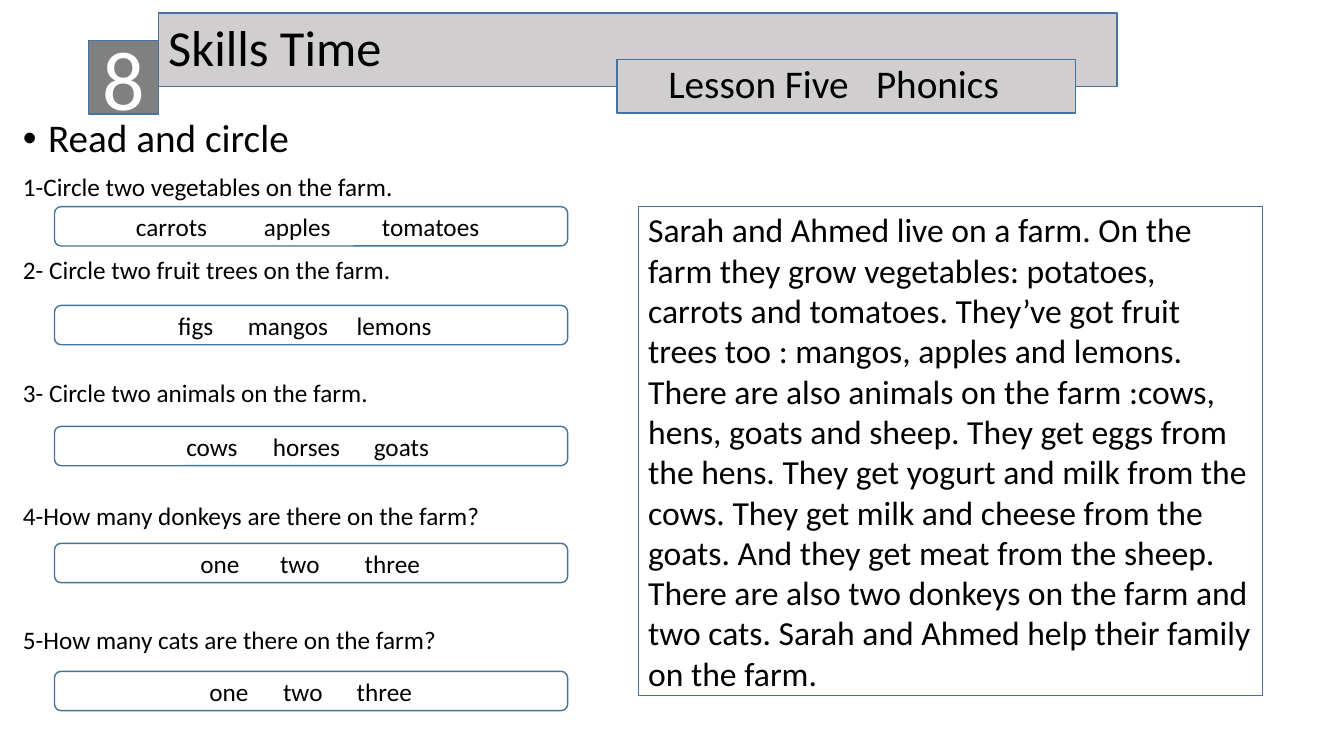
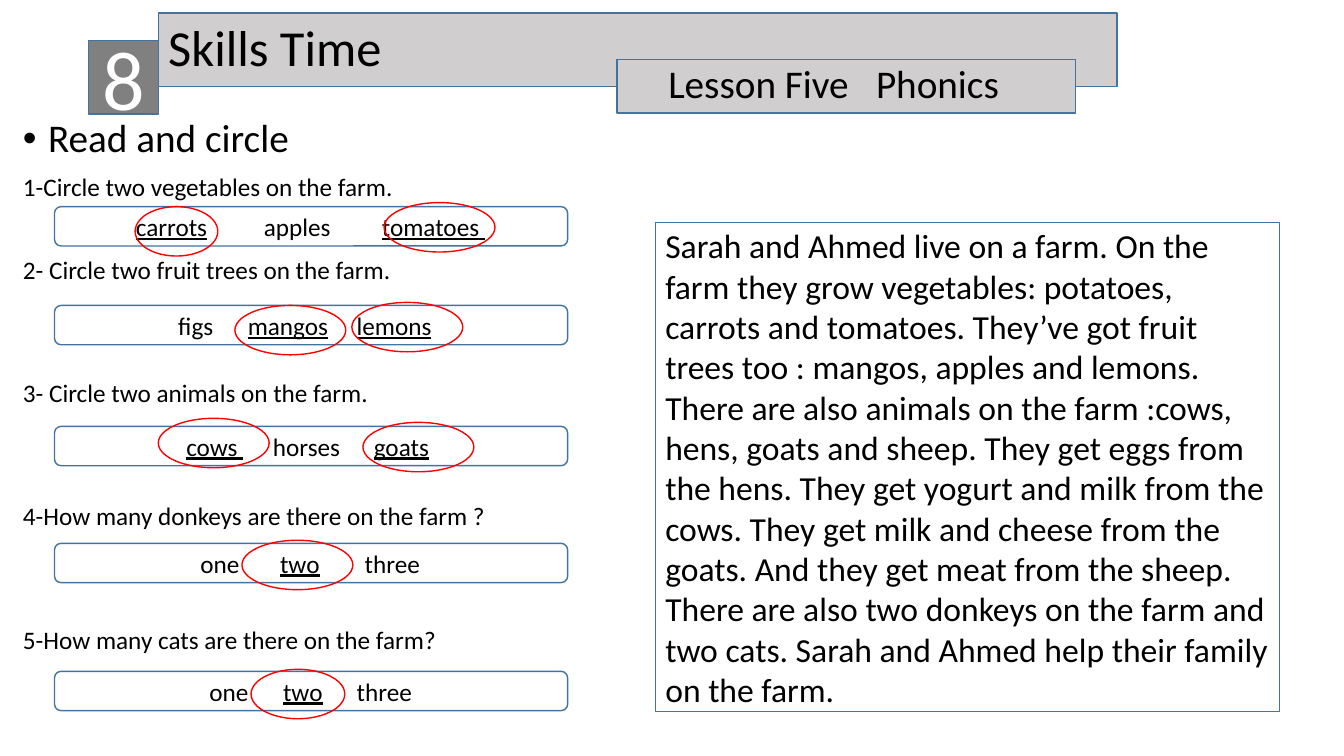
"""Build two phonics worksheet slides: the exercise and its answers."""
from lxml.etree import SubElement
from pptx import Presentation
from pptx.dml.color import RGBColor
from pptx.enum.shapes import MSO_SHAPE as Shape
from pptx.enum.text import MSO_ANCHOR as Anchor, PP_ALIGN as Align
from pptx.oxml.ns import qn
from pptx.util import Inches, Pt

PASSAGE = (
    "Sarah and Ahmed live on a farm. On the farm they grow vegetables: "
    "potatoes, carrots and tomatoes. They’ve got fruit trees too : mangos, "
    "apples and lemons. There are also animals on the farm :cows, hens, goats "
    "and sheep. They get eggs from the hens. They get yogurt and milk from the "
    "cows. They get milk and cheese from the goats. And they get meat from the "
    "sheep. There are also two donkeys on the farm and two cats. Sarah and "
    "Ahmed help their family on the farm."
)

QUESTIONS = [
    ("1-Circle two vegetables on the farm.", 10),
    ("2- Circle two fruit trees on the farm.", 39.3),
    ("3- Circle two animals on the farm.", 68.6),
    ("4-How many donkeys are there on the farm{gap}?", 68.6),
    ("5-How many cats are there on the farm?", 68.6),
]

CHOICES = [
    (2.05, ["carrots", "apples", "tomatoes "], [0.69, 1.96, 3.13], {0, 2}),
    (3.03, ["figs", "mangos", "lemons"], [1.11, 1.8, 2.88], {1, 2}),
    (4.23, ["cows ", "horses", "goats"], [1.19, 2.05, 3.05], {0, 2}),
    (5.39, ["one", "two", "three"], [1.33, 2.12, 2.96], {1}),
    (6.66, ["one", "two", "three"], [1.42, 2.15, 2.88], {1}),
]

CIRCLES = [
    (1.34, 2.05, 0.82), (3.81, 2.01, 1.1),
    (2.33, 3.03, 1.1), (3.49, 3, 1.1),
    (1.57, 4.15, 1.1), (3.6, 4.19, 1.1),
    (2.4, 5.36, 1.1), (2.49, 6.64, 0.93),
]


def colour(code):
    return RGBColor.from_string(code)


def write(paragraph, text, size=18, ink="000000", font="Calibri", align=Align.LEFT,
          spacing=None, before=None, bullet=False, stops=(), underlined=()):
    properties = paragraph._p.get_or_add_pPr()
    if bullet:
        properties.set("marL", str(Inches(0.25)))
        properties.set("indent", str(-Inches(0.25)))
        SubElement(properties, qn("a:buFont"), typeface="Arial")
        SubElement(properties, qn("a:buChar"), char="•")
    if stops:
        tabs = SubElement(properties, qn("a:tabLst"))
        for stop in stops:
            SubElement(tabs, qn("a:tab"), pos=str(Inches(stop)), algn="l")
    paragraph.alignment = align
    if spacing:
        paragraph.line_spacing = spacing
    if before:
        paragraph.space_before = Pt(before)
    words = [text] if isinstance(text, str) else text
    for index, word in enumerate(words):
        pieces = [("\t", False)] if stops else []
        pieces.append((word, index in underlined))
        for piece, marked in pieces:
            run = paragraph.add_run()
            run.text = piece
            run.font.name = font
            run.font.size = Pt(size)
            run.font.color.rgb = colour(ink)
            if marked:
                run.font.underline = True


class Worksheet:
    edge, band, badge, paper, mark = "43739E", "D0CECE", "808080", "FFFFFF", "FF0000"

    def __init__(self):
        self.deck = Presentation()
        self.deck.slide_width, self.deck.slide_height = Inches(13.33), Inches(7.5)
        self.slide = None

    def outline(self, kind, left, top, width, height, fill=None, line=edge):
        item = self.slide.shapes.add_shape(
            kind, Inches(left), Inches(top), Inches(width), Inches(height))
        item.shadow.inherit = False
        if fill:
            item.fill.solid()
            item.fill.fore_color.rgb = colour(fill)
        else:
            item.fill.background()
        item.line.color.rgb = colour(line)
        item.line.width = Pt(1)
        return item

    def panel(self, place, text, fill=paper, kind=Shape.RECTANGLE, **style):
        frame = self.outline(kind, *place, fill=fill).text_frame
        frame.word_wrap = True
        frame.vertical_anchor = Anchor.MIDDLE
        write(frame.paragraphs[0], text, **style)

    def circle(self, left, top, width):
        self.outline(Shape.OVAL, left, top, width, 0.49, line=self.mark)

    def questions(self, gap):
        frame = self.slide.shapes.add_textbox(
            Inches(0.13), Inches(1.13), Inches(12.54), Inches(6.19)).text_frame
        frame.word_wrap = True
        write(frame.paragraphs[0], "Read and circle", size=28, spacing=0.9, bullet=True)
        for question, before in QUESTIONS:
            write(frame.add_paragraph(), question.format(gap=gap),
                  spacing=0.9, before=before)

    def header(self):
        self.panel((0.88, 0.4, 0.69, 0.73), "8", self.badge,
                   size=60, ink="FFFFFF", align=Align.CENTER)
        self.panel((1.57, 0.13, 9.51, 0.73), "Skills Time", self.band,
                   size=36, spacing=0.9)
        self.panel((6.12, 0.59, 4.55, 0.53), ["Lesson Five", "Phonics"], self.band,
                   size=28, spacing=0.9, stops=[0.41, 2.47])

    def page(self, passage_left, passage_top, gap="", answered=False):
        self.slide = self.deck.slides.add_slide(self.deck.slide_layouts[6])
        self.questions(gap)
        self.header()
        for top, words, stops, answers in CHOICES:
            self.panel((0.54, top, 5.09, 0.39), words, kind=Shape.ROUNDED_RECTANGLE,
                       stops=stops, underlined=answers if answered else ())
        if answered:
            for place in CIRCLES:
                self.circle(*place)
        self.panel((passage_left, passage_top, 6.19, 4.85), PASSAGE, size=24)


def main():
    worksheet = Worksheet()
    worksheet.page(6.33, 2.05)
    worksheet.page(6.5, 2.21, gap=" ", answered=True)
    worksheet.deck.save("out.pptx")


if __name__ == "__main__":
    main()
